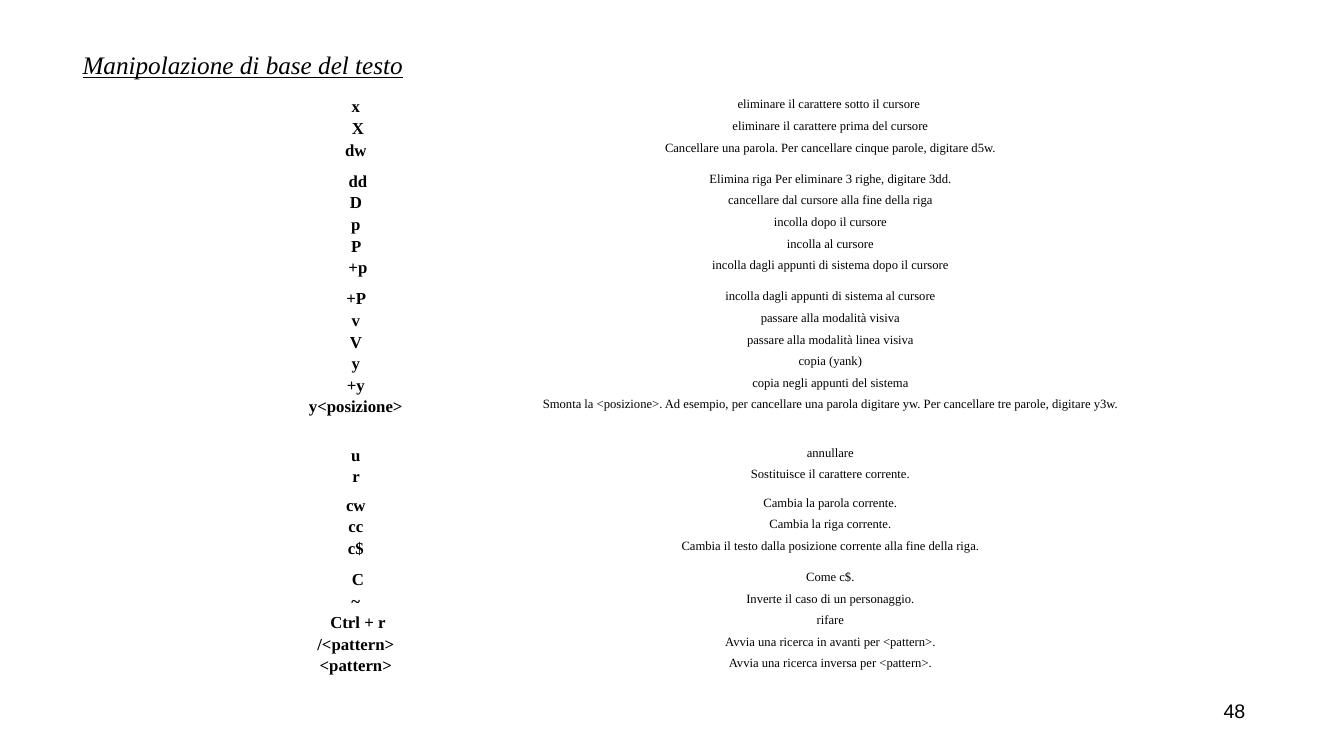
from typing import NamedTuple

from pptx import Presentation
from pptx.dml.color import RGBColor
from pptx.enum.text import MSO_ANCHOR, PP_ALIGN as Align
from pptx.util import Inches, Pt

BLACK = RGBColor(0x00, 0x00, 0x00)
SERIF = "Times New Roman"
SANS = "Arial"
ROW_HEIGHT = 15.43 / 72  # one 12 pt line with its spacing
COLUMN_WIDTHS = (3.62, 5.75)


class Command(NamedTuple):
    keys: str
    meaning: str
    height: float = ROW_HEIGHT


class Label(NamedTuple):
    text: str
    left: float
    top: float
    width: float
    height: float
    font_name: str
    size: int
    align: Align
    emphasis: bool = False


COMMANDS = [
    Command("x ", "eliminare il carattere sotto il cursore "),
    Command("X", "eliminare il carattere prima del cursore"),
    Command("dw ", "Cancellare una parola. Per cancellare cinque parole, digitare d5w.", 0.31),
    Command("dd", "Elimina riga Per eliminare 3 righe, digitare 3dd."),
    Command("D ", "cancellare dal cursore alla fine della riga"),
    Command("p ", "incolla dopo il cursore"),
    Command("P ", "incolla al cursore"),
    Command("+p", "incolla dagli appunti di sistema dopo il cursore", 0.31),
    Command("+P ", "incolla dagli appunti di sistema al cursore"),
    Command("v ", "passare alla modalità visiva"),
    Command("V ", "passare alla modalità linea visiva"),
    Command("y ", "copia (yank)"),
    Command("+y ", "copia negli appunti del sistema"),
    Command("y<posizione> ", "Smonta la <posizione>. Ad esempio, per cancellare una parola "
            "digitare yw. Per cancellare tre parole, digitare y3w.", 0.48),
    Command("u ", "annullare"),
    Command("r ", "Sostituisce il carattere corrente.", 0.28),
    Command("cw ", "Cambia la parola corrente."),
    Command("cc ", "Cambia la riga corrente."),
    Command("c$ ", "Cambia il testo dalla posizione corrente alla fine della riga.", 0.31),
    Command("C", "Come c$."),
    Command("~ ", "Inverte il caso di un personaggio."),
    Command("Ctrl + r", "rifare"),
    Command("/<pattern> ", "Avvia una ricerca in avanti per <pattern>."),
    Command("<pattern> ", "Avvia una ricerca inversa per <pattern>."),
]

LABELS = [
    Label("Manipolazione di base del testo", 0.72, 0.44, 12.61, 0.4, SERIF, 18, Align.LEFT, True),
    Label("48", 11.77, 6.88, 0.68, 0.4, SANS, 14, Align.RIGHT),
]


def style_font(font, name: str, size: int) -> None:
    font.name = name
    font.size = Pt(size)
    font.color.rgb = BLACK


def fill_cell(cell, text: str, size: int, bold: bool) -> None:
    cell.margin_left = cell.margin_right = cell.margin_bottom = 0
    cell.margin_top = Inches(0.01)
    cell.fill.background()
    cell.text_frame.text = text
    paragraph = cell.text_frame.paragraphs[0]
    paragraph.alignment = Align.CENTER
    paragraph.line_spacing = 1.07
    font = paragraph.runs[0].font
    style_font(font, SERIF, size)
    font.bold = bold


def add_command_table(slide, commands: list[Command]) -> None:
    frame = slide.shapes.add_table(
        len(commands), len(COLUMN_WIDTHS), Inches(1.74), Inches(0.95),
        Inches(sum(COLUMN_WIDTHS)), Inches(sum(command.height for command in commands)))
    table = frame.table
    table.first_row = table.horz_banding = False
    for column, width in zip(table.columns, COLUMN_WIDTHS):
        column.width = Inches(width)
    for row, command in zip(table.rows, commands):
        row.height = Inches(command.height)
        fill_cell(row.cells[0], command.keys, 12, True)
        fill_cell(row.cells[1], command.meaning, 9, False)


def add_label(slide, label: Label) -> None:
    box = slide.shapes.add_textbox(Inches(label.left), Inches(label.top),
                                   Inches(label.width), Inches(label.height))
    text_frame = box.text_frame
    text_frame.word_wrap = True
    text_frame.vertical_anchor = MSO_ANCHOR.MIDDLE if label.emphasis else MSO_ANCHOR.TOP
    text_frame.text = label.text
    paragraph = text_frame.paragraphs[0]
    paragraph.alignment = label.align
    font = paragraph.runs[0].font
    style_font(font, label.font_name, label.size)
    font.italic = font.underline = label.emphasis


def main() -> None:
    presentation = Presentation()
    presentation.slide_width = Inches(13.33)
    presentation.slide_height = Inches(7.5)
    slide = presentation.slides.add_slide(presentation.slide_layouts[6])

    # Command reference
    add_command_table(slide, COMMANDS)

    # Title and page number
    for label in LABELS:
        add_label(slide, label)

    presentation.save("out.pptx")


if __name__ == "__main__":
    main()
